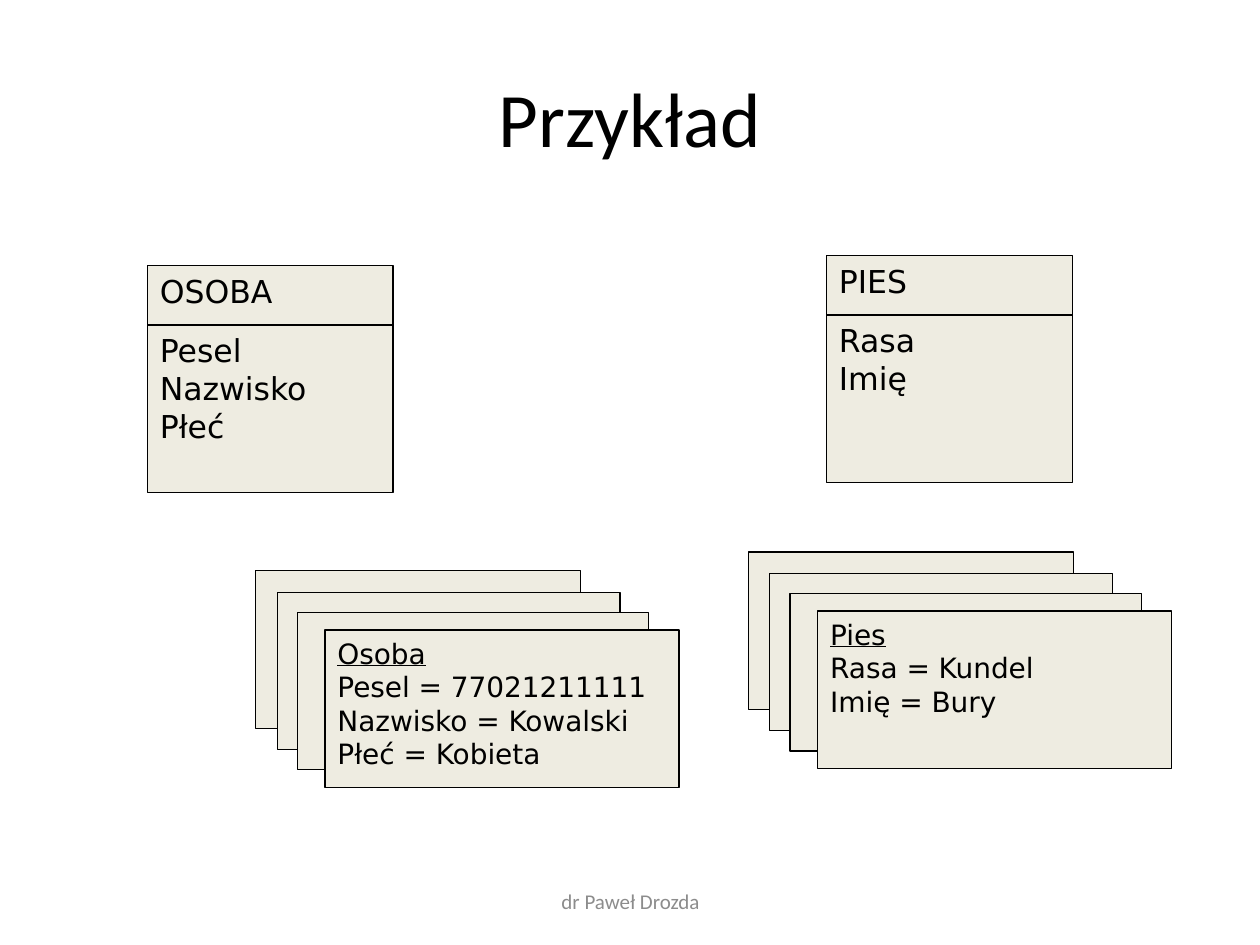
from pptx import Presentation
from pptx.dml.color import RGBColor
from pptx.enum.shapes import MSO_SHAPE
from pptx.enum.text import MSO_ANCHOR, PP_ALIGN
from pptx.util import Inches, Pt

BLACK = RGBColor(0x00, 0x00, 0x00)
GREY = RGBColor(0x8C, 0x8C, 0x8C)
BEIGE = RGBColor(0xEE, 0xEC, 0xE1)

TITLE = "Przykład"
FOOTER = "dr Paweł Drozda"
# left, top, class name, attributes
CLASSES = [
    (1.17, 2.11, "OSOBA", ["Pesel", "Nazwisko", "Płeć"]),
    (6.56, 2.03, "PIES", ["Rasa", "Imię"]),
]
# left, top, lines of the front card
STACKS = [
    (2.03, 4.53, ["Osoba", "Pesel = 77021211111", "Nazwisko = Kowalski", "Płeć = Kobieta"]),
    (5.94, 4.38, ["Pies", "Rasa = Kundel", "Imię = Bury"]),
]
CLASS_W, HEAD_H, BODY_H = 1.95, 0.47, 1.33
CARD_H = 1.25
# offset right, offset down, width; back to front
CARDS = [(0, 0, 2.58), (0.17, 0.17, 2.72), (0.33, 0.33, 2.79), (0.55, 0.47, 2.81)]


def style_text(tf, size, font, color, align):
    for p in tf.paragraphs:
        p.alignment = align
        for r in p.runs:
            r.font.size = Pt(size)
            r.font.name = font
            r.font.color.rgb = color


def add_box(s, left, top, width, height, lines=(), size=18):
    box = s.shapes.add_shape(MSO_SHAPE.RECTANGLE, Inches(left), Inches(top),
                             Inches(width), Inches(height))
    box.shadow.inherit = False
    box.fill.solid()
    box.fill.fore_color.rgb = BEIGE
    box.line.color.rgb = BLACK
    box.line.width = Pt(0.75)
    tf = box.text_frame
    tf.vertical_anchor = MSO_ANCHOR.TOP
    if lines:
        tf.text = "\n".join(lines)
        style_text(tf, size, "DejaVu Sans", BLACK, PP_ALIGN.LEFT)
    return box


def main():
    prs = Presentation()
    prs.slide_width, prs.slide_height = Inches(10), Inches(7.5)
    s = prs.slides.add_slide(prs.slide_layouts[5])

    title = s.shapes.title
    title.left, title.top = Inches(0.5), Inches(0.3)
    title.width, title.height = Inches(9), Inches(1.25)
    footer = s.shapes.add_textbox(Inches(3.42), Inches(6.95), Inches(3.17), Inches(0.4))
    for sp, text, size, color in [(title, TITLE, 44, BLACK), (footer, FOOTER, 12, GREY)]:
        tf = sp.text_frame
        tf.text = text
        tf.word_wrap = True
        tf.vertical_anchor = MSO_ANCHOR.MIDDLE
        style_text(tf, size, "Calibri", color, PP_ALIGN.CENTER)

    for left, top, name, attributes in CLASSES:
        add_box(s, left, top + HEAD_H, CLASS_W, BODY_H, attributes)
        add_box(s, left, top, CLASS_W, HEAD_H, [name])

    for left, top, lines in STACKS:
        for dx, dy, width in CARDS:
            card = add_box(s, left + dx, top + dy, width, CARD_H)
        card.text_frame.text = "\n".join(lines)
        style_text(card.text_frame, 16, "DejaVu Sans", BLACK, PP_ALIGN.LEFT)
        card.text_frame.paragraphs[0].runs[0].font.underline = True

    prs.save("out.pptx")


if __name__ == "__main__":
    main()
